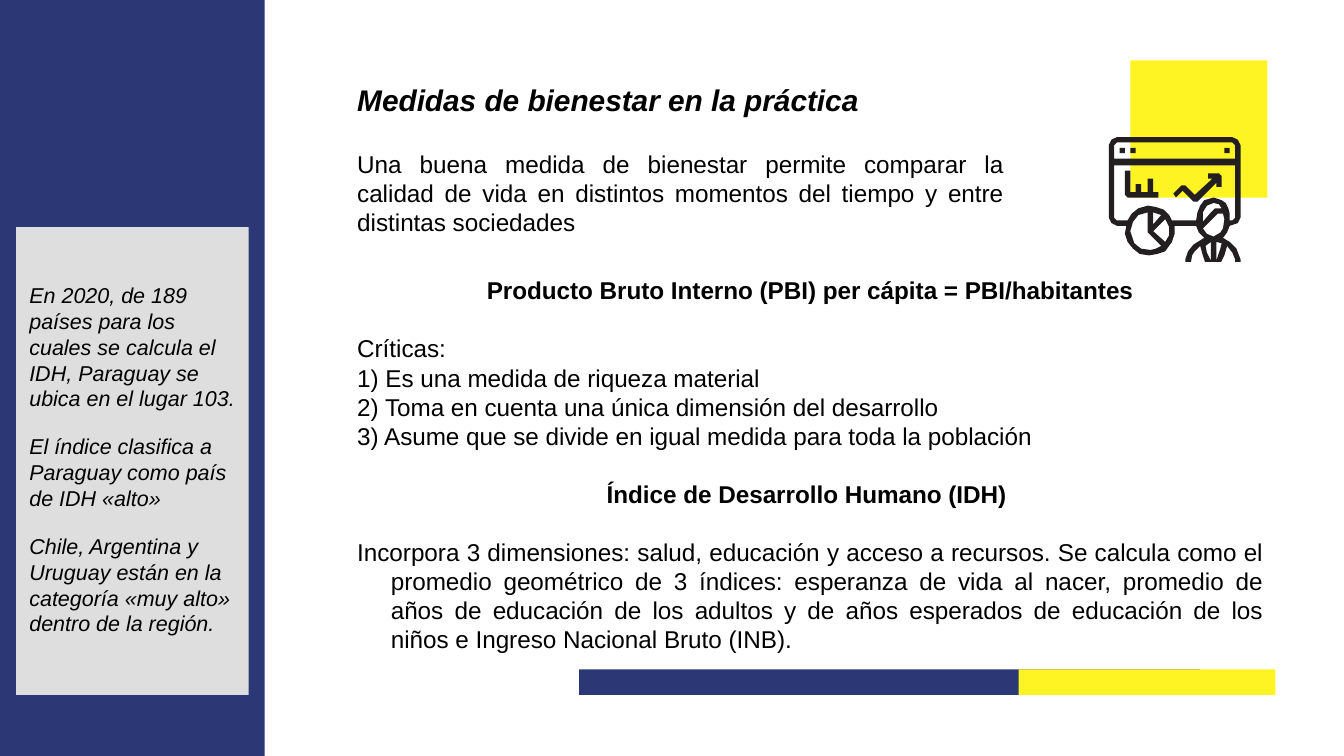
from pptx import Presentation
from pptx.dml.color import RGBColor
from pptx.enum.shapes import MSO_SHAPE
from pptx.enum.text import MSO_ANCHOR, PP_ALIGN
from pptx.util import Pt

PX = 9144  # EMU per px, 100 px to the inch
NAVY, YELLOW, GREY, WHITE = "2B3875", "FFF423", "DEDEDE", "FFFFFF"
BLACK, INK = "000000", "231F20"
LEFT, CENTER, JUSTIFY = PP_ALIGN.LEFT, PP_ALIGN.CENTER, PP_ALIGN.JUSTIFY


def px(*values):
    return [round(v * PX) for v in values]


def color(value):
    return RGBColor.from_string(value)


def paint(sp, fill):
    sp.shadow.inherit = False
    sp.fill.solid()
    sp.fill.fore_color.rgb = color(fill)
    sp.line.fill.background()


def add_block(s, box, fill):
    sp = s.shapes.add_shape(MSO_SHAPE.RECTANGLE, *px(*box))
    paint(sp, fill)
    return sp


def square(x, y, size=4):
    return [(x, y), (x + size, y), (x + size, y + size), (x, y + size)]


def add_outline(s, contours, fill):
    """One filled shape; a contour inside another cuts a hole."""
    builder = s.shapes.build_freeform(*contours[0][0], scale=PX)
    for i, contour in enumerate(contours):
        if i:
            builder.move_to(*contour[0])
        builder.add_line_segments(contour[1:], close=True)
    paint(builder.convert_to_shape(), fill)


def write(sp, paragraphs, size, insets, italic=False):
    """Each paragraph is (text, format dict)."""
    tf = sp.text_frame
    left, top, right, bottom = px(*insets)
    frame = {"word_wrap": True, "vertical_anchor": MSO_ANCHOR.TOP,
             "margin_left": left, "margin_top": top,
             "margin_right": right, "margin_bottom": bottom}
    for name, value in frame.items():
        setattr(tf, name, value)
    for i, (text, fmt) in enumerate(paragraphs):
        p = tf.paragraphs[0] if i == 0 else tf.add_paragraph()
        p.alignment = fmt.get("align", LEFT)
        p.line_spacing = Pt(size * 1.2)
        p.space_before = Pt(fmt.get("before", 0))
        if fmt.get("hanging"):
            indent = px(25)[0]
            p._p.get_or_add_pPr().set("marL", str(indent))
            p._p.get_or_add_pPr().set("indent", str(-indent))
        r = p.add_run()
        r.text = text
        font = {"name": "Arial", "size": Pt(size), "italic": italic,
                "bold": fmt.get("bold", False)}
        for name, value in font.items():
            setattr(r.font, name, value)
        r.font.color.rgb = color(BLACK)


def add_text(s, box, paragraphs, size, insets, italic=False):
    write(s.shapes.add_textbox(*px(*box)), paragraphs, size, insets, italic)


def add_icon(s):
    silhouette = [
        (831, 102), (917, 102), (921, 104), (923, 108), (923, 162), (921, 166),
        (915, 168), (913, 173), (910, 177), (915, 180), (920, 185), (923, 193),
        (923, 198), (921, 200), (884, 200), (882, 198), (882, 193), (884, 187),
        (888, 182), (896, 177), (892, 173), (890, 168), (874, 168), (874, 174),
        (872, 180), (867, 187), (861, 189), (855, 190), (848, 189), (843, 185),
        (839, 180), (837, 174), (838, 168), (831, 168), (827, 166), (825, 162),
        (825, 108), (827, 104)]
    title_bar = [(831, 106), (917, 106), (919, 108), (919, 118), (829, 118),
                 (829, 108)]
    window = [
        (829, 123), (919, 123), (919, 162), (917, 164), (915, 164), (915, 159),
        (914, 155), (912, 151), (909, 149), (903, 147), (896, 149), (893, 153),
        (891, 158), (890, 164), (872, 164), (870, 160), (866, 156), (860, 154),
        (854, 153), (847, 155), (842, 159), (839, 164), (831, 164), (829, 162)]
    bars = [(837, 127), (841, 127), (841, 143), (845, 143), (845, 137),
            (849, 137), (849, 143), (854, 143), (854, 133), (858, 133),
            (858, 143), (862, 143), (862, 147), (839, 147), (837, 145)]
    arrow = [(899, 129), (907, 129), (909, 131), (909, 139), (905, 139),
             (905, 136), (891, 150), (888, 150), (880, 142), (875, 147),
             (873, 144), (879, 138), (882, 138), (889, 145), (902, 133),
             (899, 133)]
    pie = [
        [(854, 158), (854, 173), (864, 183), (860, 185), (856, 186), (849, 185),
         (844, 181), (841, 172), (843, 165), (847, 160)],
        [(858, 158), (864, 160), (858, 167)],
        [(867, 163), (870, 169), (870, 175), (867, 180), (858, 172)]]
    head = [
        [(895, 165), (895, 158), (898, 153), (903, 151), (907, 152), (909, 155),
         (904, 155), (901, 158)],
        [(906, 159), (910, 159), (911, 163), (910, 170), (908, 173), (903, 176),
         (898, 174), (895, 170)]]
    suit = [
        [(893, 183), (895, 190), (897, 196), (886, 196), (887, 190), (889, 187)],
        [(897, 183), (901, 180), (901, 194), (898, 188)],
        [(905, 180), (909, 181), (908, 185), (905, 194)],
        [(913, 183), (917, 188), (919, 193), (919, 196), (908, 196), (911, 190)]]
    dots = [square(x, 110) for x in (833, 841, 911)]
    add_outline(s, [silhouette, title_bar, window, bars, arrow,
                    *pie, *head, *suit, *dots], INK)


def main():
    prs = Presentation()
    prs.slide_width, prs.slide_height = px(1000, 562.5)
    s = prs.slides.add_slide(prs.slide_layouts[6])

    # Background blocks
    for box, fill in (((431, 498, 462, 19), NAVY), ((758, 498, 191, 19), YELLOW),
                      ((0, 0, 197, 563), NAVY), ((841, 45, 102, 102), YELLOW)):
        add_block(s, box, fill)
    add_icon(s)

    # Title
    add_text(s, (256, 50, 617, 65),
             [("Medidas de bienestar en la práctica", {"bold": True})],
             16, (10, 11, 10, 10), italic=True)

    # Measures of well-being
    gap = 13 * 1.2
    item = {"align": JUSTIFY, "hanging": True}
    heading = {"align": CENTER, "bold": True}
    measures = [
        ("Producto Bruto Interno (PBI) per cápita = PBI/habitantes", heading),
        ("Críticas: ", {"align": JUSTIFY, "before": gap}),
        ("1) Es una medida de riqueza material", item),
        ("2) Toma en cuenta una única dimensión del desarrollo ", item),
        ("3) Asume que se divide en igual medida para toda la población", item),
        ("Índice de Desarrollo Humano (IDH) ",
         {**heading, "hanging": True, "before": gap}),
        ("Incorpora 3 dimensiones: salud, educación y acceso a recursos. Se calcula "
         "como el promedio geométrico de 3 índices: esperanza de vida al nacer, "
         "promedio de años de educación de los adultos y de años esperados de "
         "educación de los niños e Ingreso Nacional Bruto (INB).",
         {**item, "before": gap}),
    ]
    write(add_block(s, (256, 195, 693, 299), WHITE), measures, 13, (10, 10, 10, 10))

    # Sidebar
    facts = [
        ("En 2020, de 189 países para los cuales se calcula el IDH, Paraguay se "
         "ubica en el lugar 103.", {}),
        ("El índice clasifica a Paraguay como país de IDH «alto»", {"before": 12}),
        ("Chile, Argentina y Uruguay están en la categoría «muy alto» dentro de "
         "la región.", {"before": 12}),
    ]
    write(add_block(s, (12, 169, 173, 348), GREY), facts, 11.5, (10, 41, 10, 5),
          italic=True)

    # Introduction
    add_text(s, (256, 106, 500, 76),
             [("Una buena medida de bienestar permite comparar la calidad de vida en "
               "distintos momentos del tiempo y entre distintas sociedades",
               {"align": JUSTIFY})], 13, (10, 5, 10, 5))

    prs.save("out.pptx")


if __name__ == "__main__":
    main()
